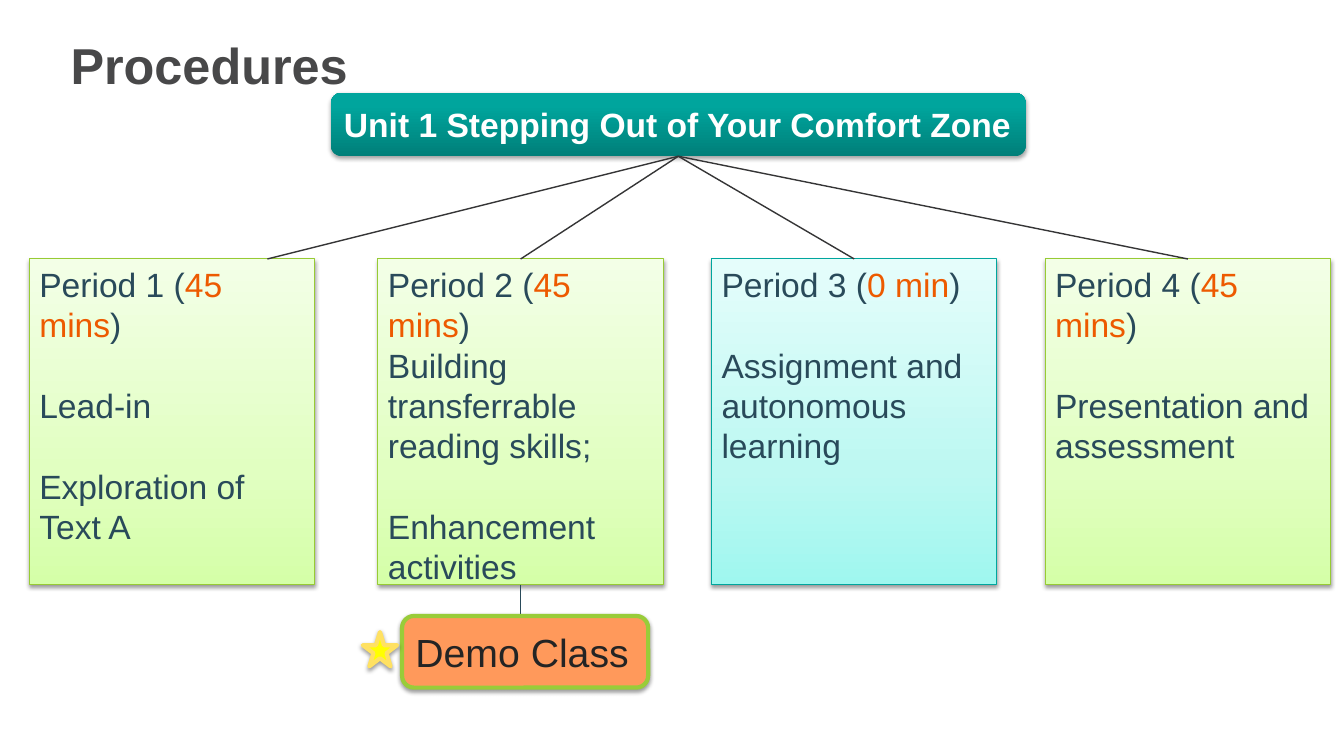
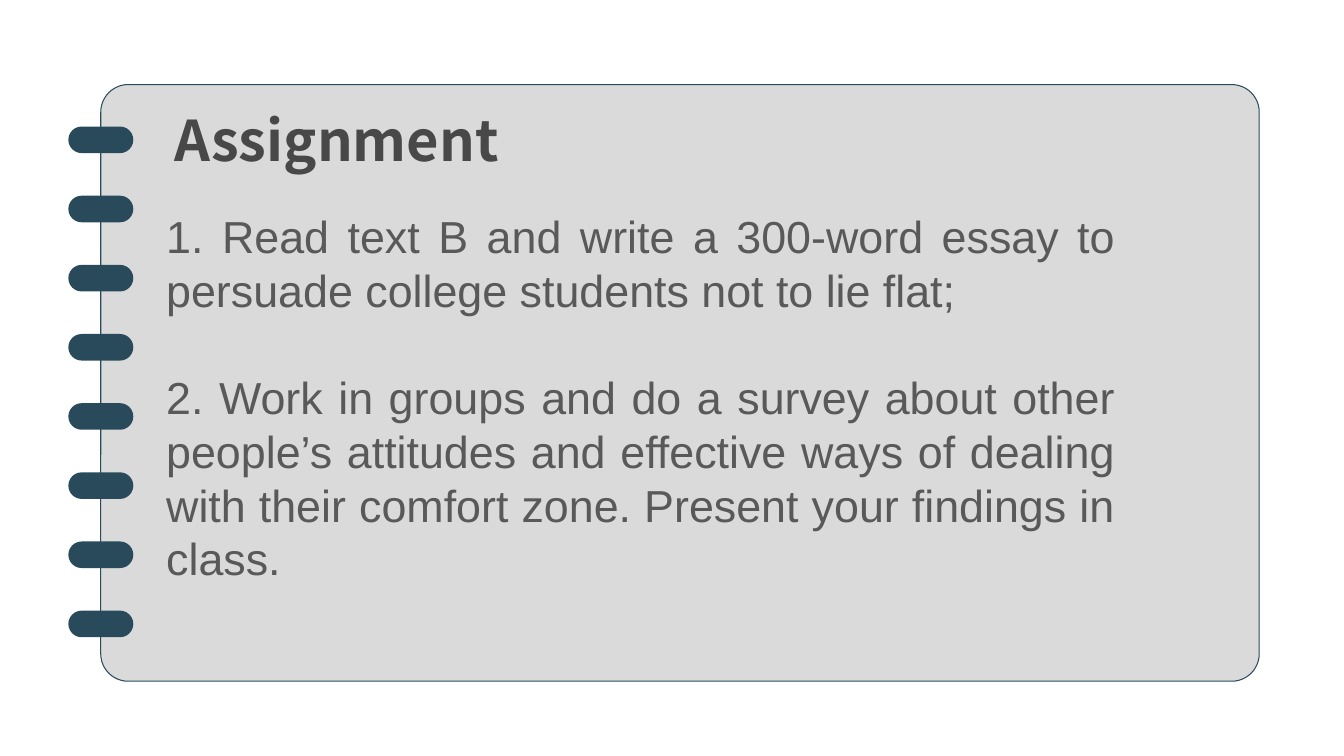
from dataclasses import dataclass
from typing import NamedTuple

from lxml.etree import SubElement
from pptx import Presentation
from pptx.dml.color import RGBColor
from pptx.enum.shapes import MSO_CONNECTOR, MSO_SHAPE
from pptx.enum.text import MSO_ANCHOR, MSO_AUTO_SIZE, PP_ALIGN
from pptx.oxml.ns import qn
from pptx.util import Pt


@dataclass(frozen=True)
class Theme:
    """Colours, fonts and type sizes used by every slide."""

    font: str = "Arial"
    display_font: str = "Noto Sans CJK SC"
    title_color: str = "484849"
    body_color: str = "595959"
    navy: str = "294A5A"
    accent: str = "ED5A00"
    white: str = "FFFFFF"
    dark: str = "242424"
    branch: str = "353536"
    panel: str = "DADADB"
    orange: str = "FF995B"
    demo_edge: str = "99CC39"
    star: str = "FFFF00"
    star_edge: str = "FFE162"
    green_edge: str = "97CB34"
    teal_edge: str = "00A69E"
    unit_stops: tuple = ((0, "007F79"), (80, "00A59D"), (100, "00A59E"))
    green_stops: tuple = ((0, "D5FFA8"), (35, "E1FFC1"), (100, "F3FFE7"))
    teal_stops: tuple = ((0, "9FF7EF"), (35, "BDF8F2"), (100, "E5FDFB"))
    title_size: int = 36
    display_size: int = 40
    card_size: int = 24
    demo_size: int = 28
    assignment_size: int = 32
    leading: float = 1.2


class Box(NamedTuple):
    """A rectangle in points."""

    left: float
    top: float
    width: float
    height: float

    def lengths(self):
        """Return the four values as lengths."""
        return [Pt(value) for value in self]


class Period(NamedTuple):
    """One teaching period; each item pairs its text with blank lines above."""

    left: float
    name: str
    duration: str
    items: tuple
    stops: tuple
    edge: str


THEME = Theme()
GREEN = (THEME.green_stops, THEME.green_edge)
TEAL = (THEME.teal_stops, THEME.teal_edge)
PERIODS = (
    Period(21, "Period 1", "45 mins",
           (("Lead-in", 1), ("Exploration of Text A", 1)), *GREEN),
    Period(270, "Period 2", "45 mins",
           (("Building transferrable reading skills;", 0),
            ("Enhancement activities", 1)), *GREEN),
    Period(508.3, "Period 3", "0 min",
           (("Assignment and autonomous learning", 1),), *TEAL),
    Period(746.6, "Period 4", "45 mins",
           (("Presentation and assessment", 1),), *GREEN),
)
ASSIGNMENTS = (
    "1. Read text B and write a 300-word essay to persuade college students "
    "not to lie flat;",
    "2. Work in groups and do a survey about other people’s attitudes and "
    "effective ways of dealing with their comfort zone. Present your findings "
    "in class.",
)


def rgb(color):
    """Turn a hex string into a colour."""
    return RGBColor.from_string(color)


def write(paragraph, text, *, size, color, font=THEME.font, bold=False,
          align=PP_ALIGN.LEFT, leading=None, gap_lines=0):
    """Add one formatted run and set the format of its paragraph."""
    run = paragraph.add_run()
    run.text = text
    run.font.name = font
    run.font.size = Pt(size)
    run.font.bold = bold
    run.font.color.rgb = rgb(color)
    paragraph.alignment = align
    if leading:
        paragraph.line_spacing = Pt(size * leading)
        paragraph.space_before = Pt(size * leading * gap_lines)


def open_frame(shape, anchor=MSO_ANCHOR.MIDDLE):
    """Return the text frame of a shape, wrapped and anchored."""
    frame = shape.text_frame
    frame.word_wrap = True
    frame.auto_size = MSO_AUTO_SIZE.NONE
    frame.vertical_anchor = anchor
    return frame


def add_gradient(shape, stops):
    """Fill a shape with colour stops that run from bottom to top."""
    shape.fill.gradient()
    shape.fill.gradient_angle = 90
    stop_list = shape.element.spPr.find(qn("a:gradFill")).find(qn("a:gsLst"))
    stop_list.clear()
    for percent, color in stops:
        stop = SubElement(stop_list, qn("a:gs"), pos=str(percent * 1000))
        SubElement(stop, qn("a:srgbClr"), val=color)


def add_shadow(shape, opacity):
    """Give a shape a soft shadow straight below it."""
    effects = shape.element.spPr.find(qn("a:effectLst"))
    shadow = SubElement(effects, qn("a:outerShdw"), blurRad=str(Pt(3.1)),
                        dist=str(Pt(1.7)), dir="5400000", rotWithShape="0")
    color = SubElement(shadow, qn("a:srgbClr"), val="000000")
    SubElement(color, qn("a:alpha"), val=str(opacity * 1000))


def add_block(shapes, kind, box, *, fill=None, stops=None, edge=None,
              edge_width=0.75, rounding=None, shadow=None):
    """Add a preset shape with its fill, outline and shadow."""
    shape = shapes.add_shape(kind, *box.lengths())
    shape.shadow.inherit = False
    if rounding is not None:
        shape.adjustments[0] = rounding
    if stops:
        add_gradient(shape, stops)
    else:
        shape.fill.solid()
        shape.fill.fore_color.rgb = rgb(fill)
    if edge:
        shape.line.color.rgb = rgb(edge)
        shape.line.width = Pt(edge_width)
    else:
        shape.line.fill.background()
    if shadow:
        add_shadow(shape, shadow)
    return shape


def add_branch(slide, parent, *, child=None, end=(0, 0), color, width):
    """Draw a line from below a parent to the top of a child or to a point."""
    line = slide.shapes.add_connector(
        MSO_CONNECTOR.STRAIGHT, 0, 0, Pt(end[0]), Pt(end[1]))
    line.begin_connect(parent, 2)
    if child is not None:
        line.end_connect(child, 0)
    line.line.color.rgb = rgb(color)
    line.line.width = Pt(width)
    SubElement(line.element.spPr, qn("a:effectLst"))


def add_titled_slide(presentation, title, box, **text_format):
    """Add a title-only slide and place its title."""
    slide = presentation.slides.add_slide(presentation.slide_layouts[5])
    shape = slide.shapes.title
    shape.left, shape.top, shape.width, shape.height = box.lengths()
    write(open_frame(shape).paragraphs[0], title, color=THEME.title_color,
          bold=True, **text_format)
    return slide


def add_unit(slide, box):
    """Add the banner that names the unit."""
    unit = add_block(slide.shapes, MSO_SHAPE.ROUNDED_RECTANGLE, box,
                     stops=THEME.unit_stops, shadow=35)
    write(open_frame(unit).paragraphs[0],
          "Unit 1 Stepping Out of Your Comfort Zone",
          size=THEME.card_size, color=THEME.white, bold=True)
    return unit


def add_period(slide, box, period):
    """Add the card of one period."""
    card = add_block(slide.shapes, MSO_SHAPE.RECTANGLE, box,
                     stops=period.stops, edge=period.edge, shadow=38)
    frame = open_frame(card, MSO_ANCHOR.TOP)
    body = {"size": THEME.card_size, "leading": THEME.leading}
    heading = frame.paragraphs[0]
    for text, color in ((f"{period.name} (", THEME.navy),
                        (period.duration, THEME.accent), (")", THEME.navy)):
        write(heading, text, color=color, **body)
    for text, gap_lines in period.items:
        write(frame.add_paragraph(), text, color=THEME.navy,
              gap_lines=gap_lines, **body)
    return card


def add_demo(slide, box):
    """Add the demo class label with its star."""
    demo = add_block(slide.shapes, MSO_SHAPE.ROUNDED_RECTANGLE, box,
                     fill=THEME.orange, edge=THEME.demo_edge, edge_width=3,
                     shadow=38)
    write(open_frame(demo).paragraphs[0], "Demo Class",
          size=THEME.demo_size, color=THEME.dark)
    star_box = Box(box.left - 28, box.top + 11.5, 24.5, 24.5)
    add_block(slide.shapes, MSO_SHAPE.STAR_5_POINT, star_box, fill=THEME.star,
              edge=THEME.star_edge, edge_width=3, shadow=38)


def add_notebook(slide, box, ring_count=8):
    """Add a grouped notebook page with rings along its left edge."""
    shapes = slide.shapes.add_group_shape().shapes
    add_block(shapes, MSO_SHAPE.ROUNDED_RECTANGLE, box, fill=THEME.panel,
              edge=THEME.navy, rounding=0.046)
    width, height, pitch = 46.4, 19, 49.4
    for index in range(ring_count):
        ring = Box(box.left - width / 2, box.top + 30 + index * pitch,
                   width, height)
        add_block(shapes, MSO_SHAPE.ROUNDED_RECTANGLE, ring, fill=THEME.navy,
                  rounding=0.5)


def add_assignments(slide, box):
    """Add the list of assignments."""
    frame = open_frame(slide.shapes.add_textbox(*box.lengths()),
                       MSO_ANCHOR.TOP)
    for index, text in enumerate(ASSIGNMENTS):
        paragraph = frame.add_paragraph() if index else frame.paragraphs[0]
        write(paragraph, text, size=THEME.assignment_size,
              color=THEME.body_color, align=PP_ALIGN.JUSTIFY,
              leading=THEME.leading, gap_lines=min(index, 1))


def build_procedures(presentation):
    """Build the slide that splits the unit into periods."""
    slide = add_titled_slide(presentation, "Procedures",
                             Box(43.2, 21, 834.5, 49.7), size=THEME.title_size)
    unit = add_unit(slide, Box(236.4, 66.3, 496.3, 45.3))
    cards = [add_period(slide, Box(period.left, 185, 203.8, 232.6), period)
             for period in PERIODS]
    branch = {"color": THEME.branch, "width": 1}
    add_branch(slide, unit, end=(191, 185), **branch)
    for card in cards[1:]:
        add_branch(slide, unit, child=card, **branch)
    add_branch(slide, cards[1], end=(371.9, 476), color=THEME.navy, width=0.75)
    add_demo(slide, Box(287.2, 440, 175.8, 51.2))


def build_assignment(presentation):
    """Build the notebook slide with the assignments."""
    slide = add_titled_slide(presentation, "Assignment",
                             Box(105.8, 72, 269.3, 55.4),
                             size=THEME.display_size, font=THEME.display_font,
                             align=PP_ALIGN.CENTER)
    add_notebook(slide, Box(72, 60.4, 827.5, 426.2))
    tree = slide.shapes.title.element.getparent()
    tree.append(slide.shapes.title.element)
    add_assignments(slide, Box(111.6, 145.4, 692.6, 278.6))


def main():
    """Build and save the presentation."""
    presentation = Presentation()
    presentation.slide_width, presentation.slide_height = Pt(960), Pt(540)
    build_procedures(presentation)
    build_assignment(presentation)
    presentation.save("out.pptx")


if __name__ == "__main__":
    main()
